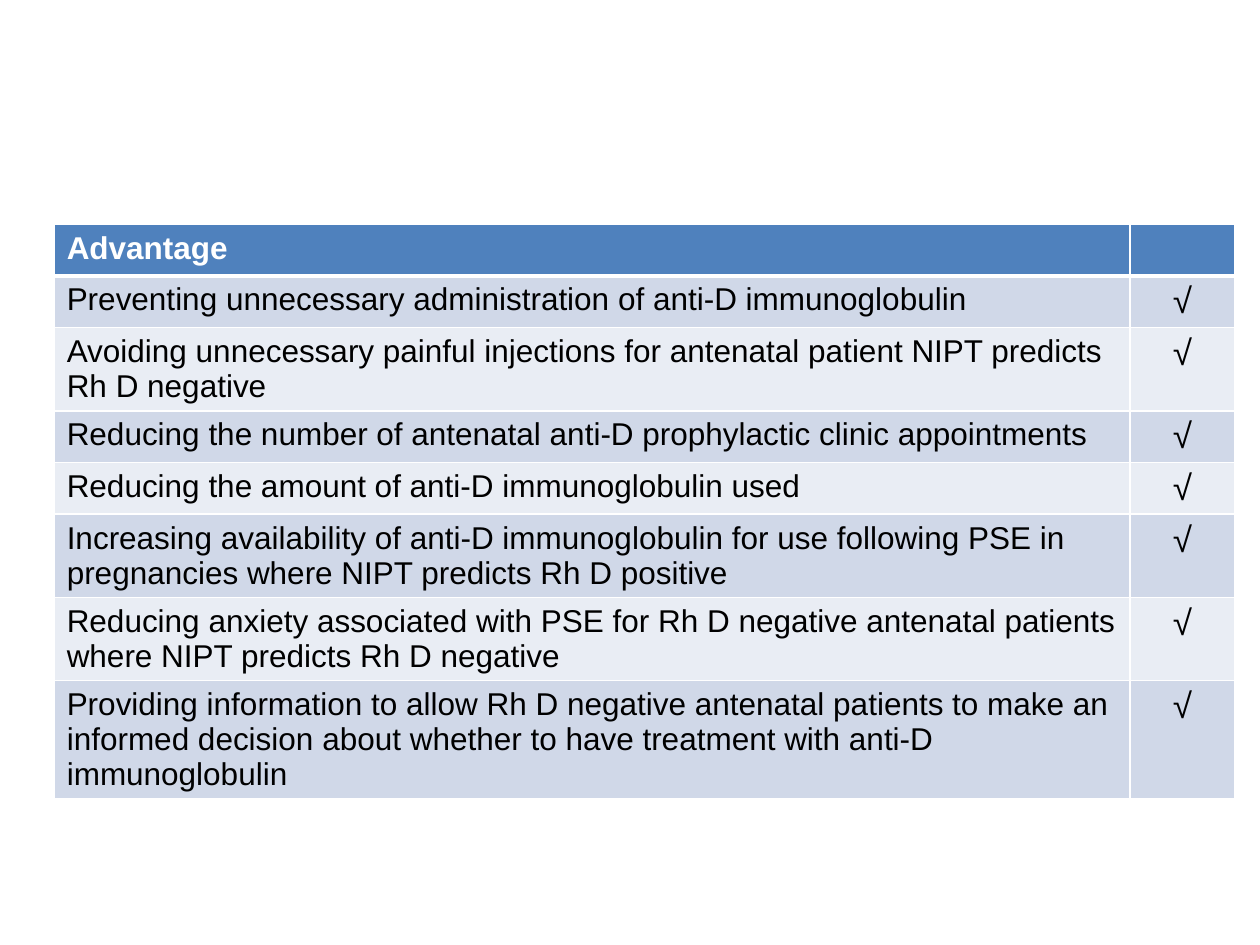
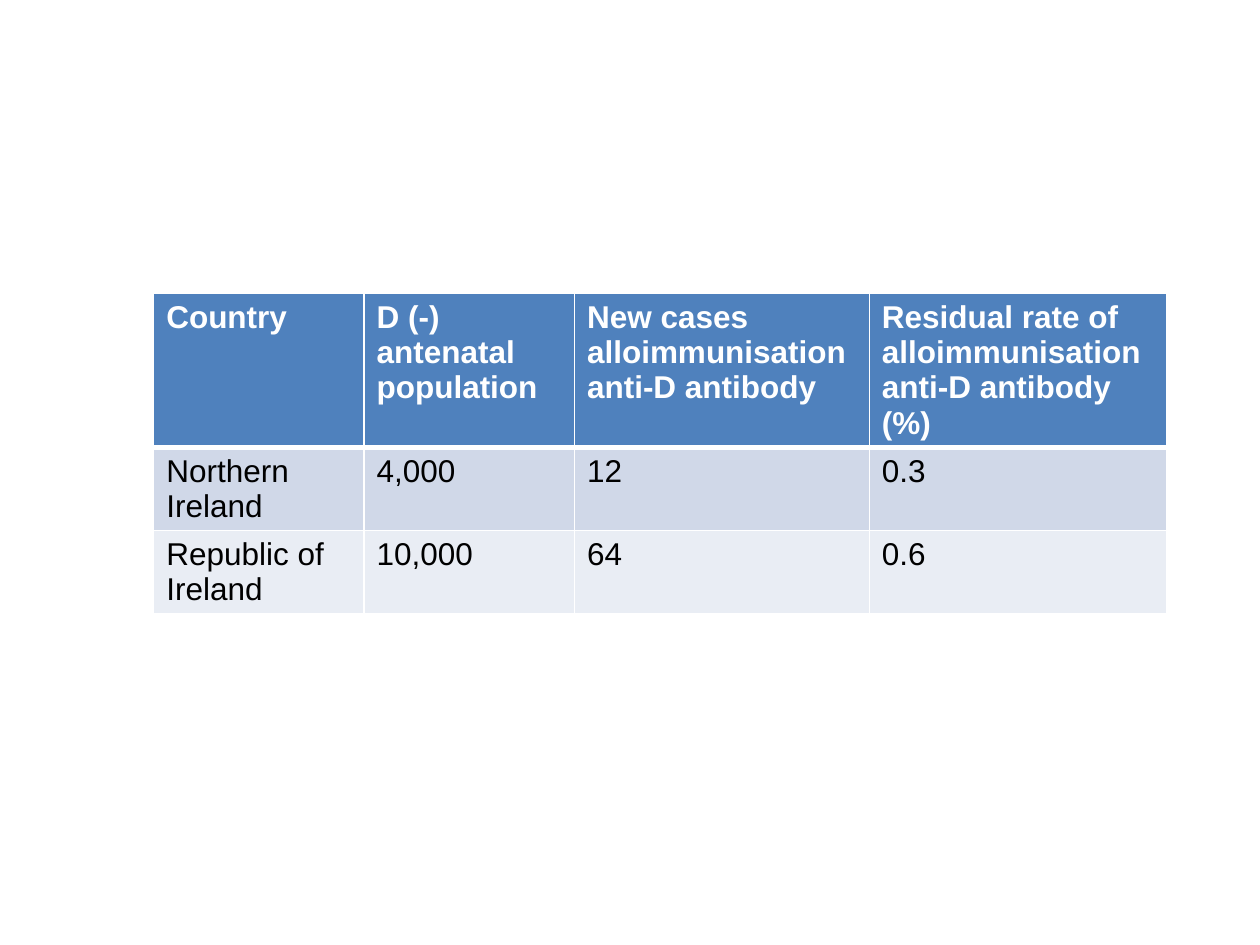
from lxml.etree import SubElement
from pptx import Presentation
from pptx.dml.color import RGBColor as RGB
from pptx.enum.text import PP_ALIGN as ALIGN
from pptx.oxml.ns import qn
from pptx.util import Inches, Pt

COLORS = {"header": "4F81BD", "odd": "D0D8E8", "even": "E9EDF4", "line": "FFFFFF",
          "header_text": "FFFFFF", "text": "000000"}
FONT = "Arial"
SIZE = 18
TICK = "√"
TICK_SIZE = 20
ROW_H = 0.41

ADVANTAGES = [
    "Preventing unnecessary administration of anti-D immunoglobulin",
    "Avoiding unnecessary painful injections for antenatal patient NIPT predicts Rh D negative",
    "Reducing the number of antenatal anti-D prophylactic clinic appointments",
    "Reducing the amount of anti-D immunoglobulin used",
    "Increasing availability of anti-D immunoglobulin for use following PSE in pregnancies "
    "where NIPT predicts Rh D positive",
    "Reducing anxiety associated with PSE for Rh D negative antenatal patients where NIPT "
    "predicts Rh D negative",
    "Providing information to allow Rh D negative antenatal patients to make an informed "
    "decision about whether to have treatment with anti-D immunoglobulin",
]

TABLES = [
    {"at": (0.43, 1.78), "height": 4.81, "cols": [8.54, 0.83],
     "rows": [("Advantage", "")] + [(a, TICK) for a in ADVANTAGES]},
    {"at": (1.22, 2.33), "height": 2.7, "cols": [1.67, 1.67, 2.34, 2.36],
     "rows": [("Country", "D (-) antenatal population",
               "New cases alloimmunisation anti-D antibody",
               "Residual rate of alloimmunisation anti-D antibody (%)"),
              ("Northern Ireland", "4,000", "12", "0.3"),
              ("Republic of Ireland", "10,000", "64", "0.6")]},
]


def color(name):
    return RGB.from_string(COLORS[name])


def set_borders(cell, top, bottom):
    tcPr = cell._tc.get_or_add_tcPr()
    for side, width in (("L", 1), ("R", 1), ("T", top), ("B", bottom)):
        ln = SubElement(tcPr, qn(f"a:ln{side}"), w=str(Pt(width)))
        fill = SubElement(ln, qn("a:solidFill"))
        SubElement(fill, qn("a:srgbClr"), val=COLORS["line"])


def fill_cell(cell, text, row):
    header = row == 0
    set_borders(cell, 3 if row == 1 else 1, 3 if header else 1)
    cell.fill.solid()
    cell.fill.fore_color.rgb = color("header" if header else "odd" if row % 2 else "even")
    cell.text_frame.text = text
    p = cell.text_frame.paragraphs[0]
    if text == TICK:
        p.alignment = ALIGN.CENTER
    for r in p.runs:
        r.font.name, r.font.bold = FONT, header
        r.font.size = Pt(TICK_SIZE if text == TICK else SIZE)
        r.font.color.rgb = color("header_text" if header else "text")


def add_grid(s, at, height, cols, rows):
    frame = s.shapes.add_table(len(rows), len(cols), *map(Inches, (*at, sum(cols), height)))
    table = frame.table
    for column, width in zip(table.columns, cols):
        column.width = Inches(width)
    for i, texts in enumerate(rows):
        table.rows[i].height = Inches(ROW_H)
        for j, text in enumerate(texts):
            fill_cell(table.cell(i, j), text, i)
    frame.height = Inches(height)


def main():
    prs = Presentation()
    prs.slide_width, prs.slide_height = Inches(10), Inches(7.5)
    blank = prs.slide_layouts[6]
    for grid in TABLES:
        add_grid(prs.slides.add_slide(blank), **grid)
    prs.save("out.pptx")


if __name__ == "__main__":
    main()
